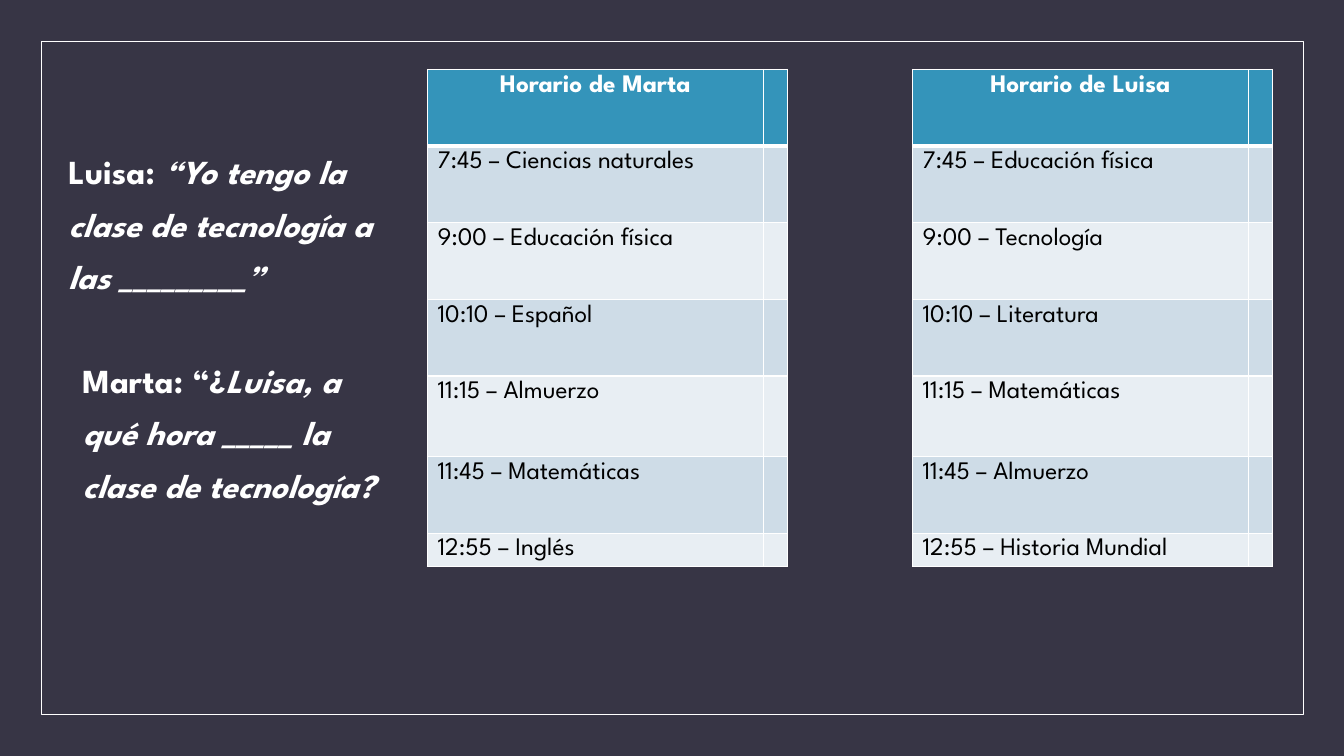
import pptx
import pptx.dml.color
import pptx.enum.shapes
import pptx.enum.text
import pptx.oxml
import pptx.oxml.ns
import pptx.util
from pptx.util import Inches

COLORS = {
    "background": "373545",
    "white": "FFFFFF",
    "black": "000000",
    "header": "3494BA",
    "odd_row": "CEDCE7",
    "even_row": "E8EEF3",
}
FONT = "League Spartan"
ROW_HEIGHTS = [0.76, 0.76, 0.76, 0.76, 0.8, 0.76, 0.33]
COLUMN_WIDTHS = [3.33, 0.23]
TABLE_TOP = 0.69

SCHEDULES = [
    (4.24, ["Horario de Marta", "7:45 – Ciencias naturales", "9:00 – Educación física",
            "10:10 – Español", "11:15 – Almuerzo", "11:45 – Matemáticas",
            "12:55 – Inglés"]),
    (9.05, ["Horario de Luisa", "7:45 – Educación física", "9:00 – Tecnología",
            "10:10 – Literatura", "11:15 – Matemáticas", "11:45 – Almuerzo",
            "12:55 – Historia Mundial"]),
]


def color(name):
    return pptx.dml.color.RGBColor.from_string(COLORS[name])


def write(para, text, size=18, ink="white", bold=False, italic=False):
    span = para.add_run()
    span.text = text
    span.font.name = FONT
    span.font.size = pptx.util.Pt(size)
    span.font.bold = bold
    span.font.italic = italic
    span.font.color.rgb = color(ink)


def set_borders(cell, bottom):
    """Draw white cell edges: 1 pt, with the bottom width given in points."""
    properties = cell._tc.get_or_add_tcPr()
    widths = {"lnL": 1, "lnR": 1, "lnT": 1, "lnB": bottom}
    for position, (edge, width) in enumerate(widths.items()):
        line = pptx.oxml.parse_xml(
            f'<a:{edge} {pptx.oxml.ns.nsdecls("a")} w="{pptx.util.Pt(width)}">'
            f'<a:solidFill><a:srgbClr val="{COLORS["white"]}"/></a:solidFill></a:{edge}>')
        properties.insert(position, line)


class ScheduleSlide:
    def __init__(self, deck):
        self.slide = deck.slides.add_slide(deck.slide_layouts[6])
        fill = self.slide.background.fill
        fill.solid()
        fill.fore_color.rgb = color("background")

    def frame(self, left, top, width, height):
        border = self.slide.shapes.add_shape(
            pptx.enum.shapes.MSO_SHAPE.RECTANGLE,
            Inches(left), Inches(top), Inches(width), Inches(height))
        border.shadow.inherit = False
        border.fill.background()
        border.line.color.rgb = color("white")
        border.line.width = pptx.util.Pt(0.5)

    def schedule(self, left, entries):
        """Add a table whose first entry is the header."""
        table = self.slide.shapes.add_table(
            len(entries), len(COLUMN_WIDTHS), Inches(left), Inches(TABLE_TOP),
            Inches(sum(COLUMN_WIDTHS)), Inches(sum(ROW_HEIGHTS))).table
        for column, width in zip(table.columns, COLUMN_WIDTHS):
            column.width = Inches(width)
        for index, (row, height) in enumerate(zip(table.rows, ROW_HEIGHTS)):
            row.height = Inches(height)
            is_header = index == 0
            shade = "header" if is_header else "odd_row" if index % 2 else "even_row"
            for cell in row.cells:
                cell.fill.solid()
                cell.fill.fore_color.rgb = color(shade)
                set_borders(cell, bottom=3 if is_header else 1)
            entry_cell, spare_cell = row.cells
            spare_cell.margin_top = spare_cell.margin_bottom = 0
            para = entry_cell.text_frame.paragraphs[0]
            if is_header:
                para.alignment = pptx.enum.text.PP_ALIGN.CENTER
            write(para, entries[index], ink="white" if is_header else "black", bold=is_header)

    def dialogue(self, left, top, width, height, speaker, speech):
        box = self.slide.shapes.add_textbox(
            Inches(left), Inches(top), Inches(width), Inches(height))
        box.text_frame.word_wrap = True
        para = box.text_frame.paragraphs[0]
        para.line_spacing = 1.3
        write(para, speaker, size=24, bold=True)
        write(para, speech, size=24, bold=True, italic=True)


def main():
    deck = pptx.Presentation()
    deck.slide_width = Inches(13.33)
    deck.slide_height = Inches(7.5)
    page = ScheduleSlide(deck)
    page.frame(0.41, 0.41, 12.52, 6.68)
    for left, entries in SCHEDULES:
        page.schedule(left, entries)
    page.dialogue(0.72, 3.4, 3.13, 1.72, "Marta: “¿",
                  "Luisa, a qué hora _____ la clase de tecnología?")
    page.dialogue(0.58, 1.33, 3.42, 1.72, "Luisa: ",
                  "“Yo tengo la clase de tecnología a las _________”")
    deck.save("out.pptx")


if __name__ == "__main__":
    main()
